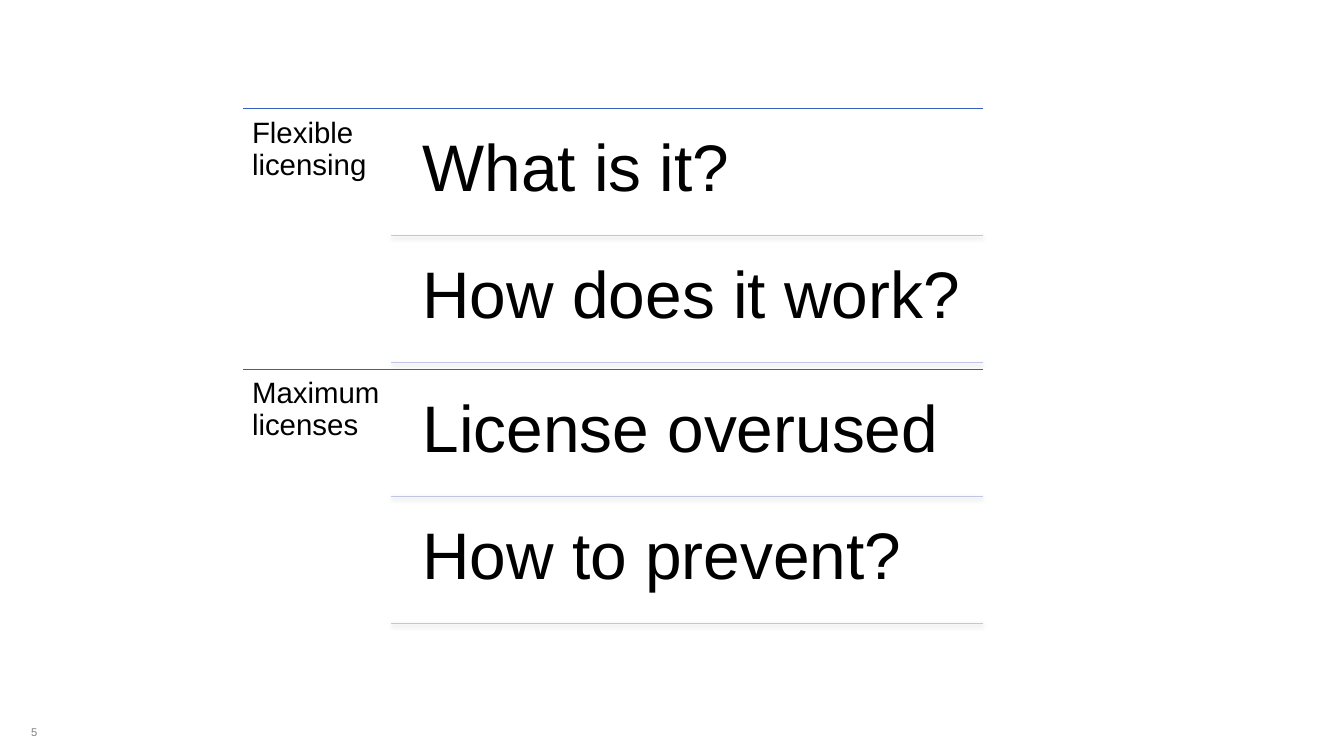
import pptx
import pptx.dml.color
import pptx.enum.shapes
import pptx.enum.text
import pptx.oxml
import pptx.oxml.ns
import pptx.util
from dataclasses import dataclass

Inches = pptx.util.Inches


@dataclass(frozen=True)
class Theme:
    font: str = "Arial"
    text: str = "000000"
    muted: str = "808080"
    section_line: str = "365EBF"
    item_line: str = "BFC5E2"
    line_width: float = 0.75
    section_size: int = 21
    item_size: int = 47
    number_size: int = 8


SHADOW = (
    f'<a:effectLst {pptx.oxml.ns.nsdecls("a")}>'
    '<a:outerShdw blurRad="40000" dist="20000" dir="5400000" rotWithShape="0">'
    '<a:srgbClr val="000000"><a:alpha val="38000"/></a:srgbClr>'
    '</a:outerShdw></a:effectLst>'
)

SECTIONS = [
    ("Flexible licensing", ["What is it?", "How does it work?"]),
    ("Maximum licenses", ["License overused", "How to prevent?"]),
]

LEFT, RIGHT, TOP = 2.41, 9.75, 1.08
SECTION_WIDTH, SECTION_HEIGHT = 1.47, 2.585
ITEM_LEFT, ITEM_HEIGHT, ITEM_GAP = 3.99, 1.2, 0.06


class SlideBuilder:
    def __init__(self, slide, theme):
        self.slide = slide
        self.theme = theme

    def text(self, words, left, top, width, height, size, color,
             insets=(0.1, 0.05), line_spacing=0.9):
        """Add a text box; insets are horizontal and vertical, in inches."""
        box = self.slide.shapes.add_textbox(
            Inches(left), Inches(top), Inches(width), Inches(height))
        frame = box.text_frame
        frame.word_wrap = True
        frame.vertical_anchor = pptx.enum.text.MSO_ANCHOR.TOP
        frame.margin_left = frame.margin_right = Inches(insets[0])
        frame.margin_top = frame.margin_bottom = Inches(insets[1])
        paragraph = frame.paragraphs[0]
        paragraph.text = words
        paragraph.line_spacing = line_spacing
        paragraph.font.name = self.theme.font
        paragraph.font.size = pptx.util.Pt(size)
        paragraph.font.color.rgb = pptx.dml.color.RGBColor.from_string(color)

    def rule(self, left, right, top, color):
        """Add a horizontal line with a soft shadow below it."""
        line = self.slide.shapes.add_connector(
            pptx.enum.shapes.MSO_CONNECTOR.STRAIGHT,
            Inches(left), Inches(top), Inches(right), Inches(top))
        line.line.width = pptx.util.Pt(self.theme.line_width)
        line.line.color.rgb = pptx.dml.color.RGBColor.from_string(color)
        line._element.spPr.append(pptx.oxml.parse_xml(SHADOW))

    def section(self, title, items, top):
        theme = self.theme
        self.rule(LEFT, RIGHT, top, theme.section_line)
        self.text(title, LEFT, top, SECTION_WIDTH, SECTION_HEIGHT,
                  theme.section_size, theme.text, insets=(0.09, 0.09))
        for index, item in enumerate(items):
            item_top = top + ITEM_GAP + index * (ITEM_HEIGHT + ITEM_GAP)
            self.text(item, ITEM_LEFT, item_top, RIGHT - ITEM_LEFT, ITEM_HEIGHT,
                      theme.item_size, theme.text, insets=(0.2, 0.2))
            self.rule(LEFT + SECTION_WIDTH, RIGHT, item_top + ITEM_HEIGHT,
                      theme.item_line)


def main():
    presentation = pptx.Presentation()
    presentation.slide_width = Inches(13.33)
    presentation.slide_height = Inches(7.5)
    slide = presentation.slides.add_slide(presentation.slide_layouts[6])
    theme = Theme()
    builder = SlideBuilder(slide, theme)
    builder.text("5", 0.21, 7.16, 0.67, 0.23, theme.number_size, theme.muted,
                 line_spacing=0.95)
    for index, (title, items) in enumerate(SECTIONS):
        builder.section(title, items, TOP + index * SECTION_HEIGHT)
    presentation.save("out.pptx")


if __name__ == "__main__":
    main()
